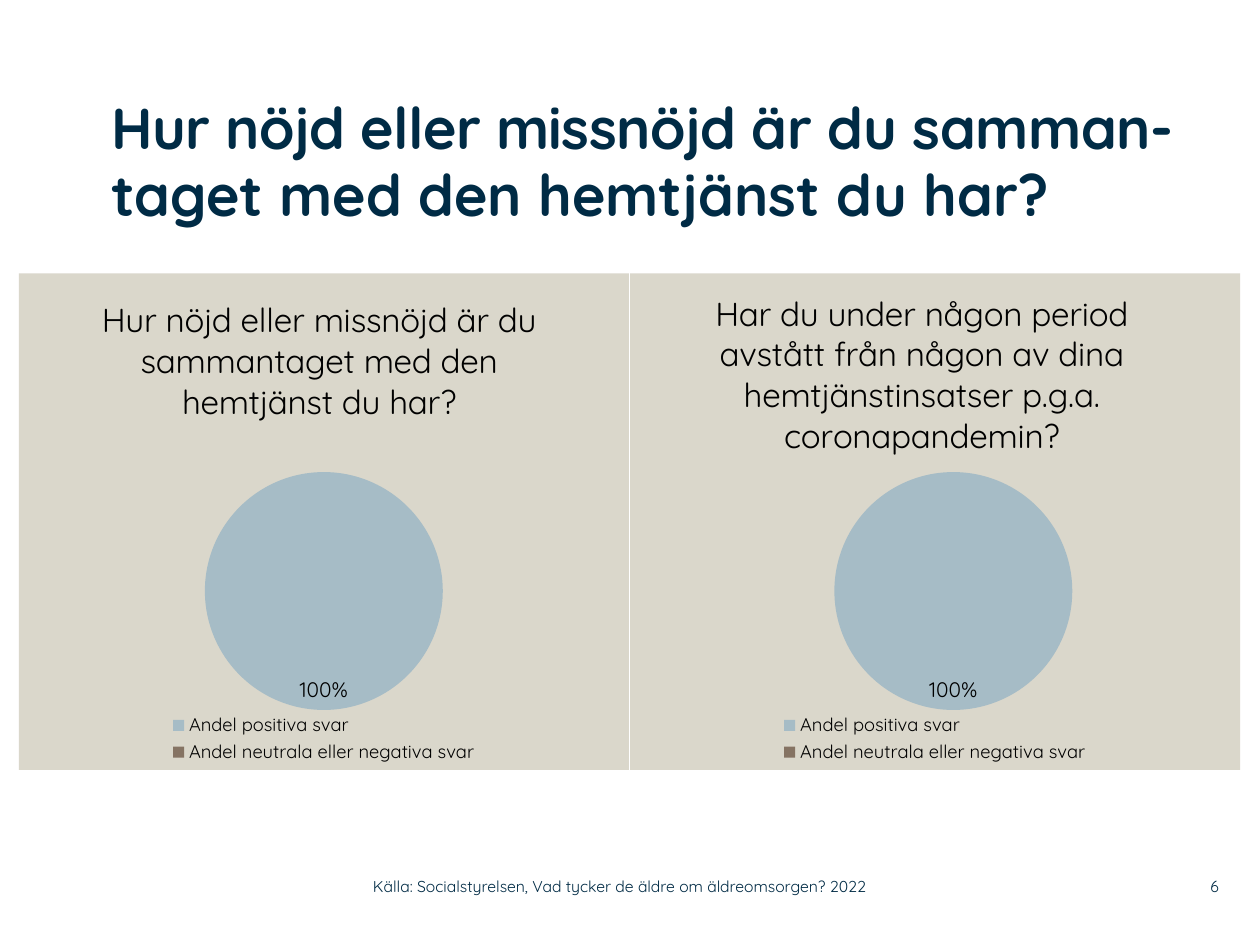
"""Build a slide with a heading, two pie charts and a footer."""
from lxml.etree import SubElement
from pptx import Presentation
from pptx.chart.data import CategoryChartData
from pptx.dml.color import RGBColor as Color
from pptx.enum.chart import XL_CHART_TYPE as ChartType, XL_LABEL_POSITION as LabelPosition
from pptx.enum.chart import XL_LEGEND_POSITION as LegendPosition
from pptx.enum.text import MSO_ANCHOR as Anchor, PP_ALIGN as Align
from pptx.oxml import parse_xml
from pptx.oxml.ns import nsdecls, qn
from pptx.util import Cm, Pt

THEME = {
    "font": "Quicksand",
    "navy": "002B45", "black": "000000", "panel": "DAD7CB",
    "slices": ("A6BCC6", "857363"),
    "heading": 33, "chart": 18, "chart_title": 19, "label": 12, "legend": 10.5, "footer": 9,
}

HEADING = [("Hur nöjd eller missnöjd är du samman-", -30), ("taget med den hemtjänst du har?", 0)]
SOURCE = [("Källa: Socialstyrelsen, Vad tycker de äldre om äldreomsorgen? 2022", 0)]
PAGE = [("6", 0)]

CATEGORIES = ["Andel positiva svar", "Andel neutrala eller negativa svar"]
VALUES = (100, 0)
LEGEND_AREA = (0.25, 0.88, 0.5, 0.115)
CHARTS = [
    {"title": "Har du under någon period avstått från någon av dina hemtjänstinsatser p.g.a. coronapandemin?",
     "column": 1, "title_at": (0.13, 0.02), "pie_area": (0.335, 0.4, 0.39, 0.48)},
    {"title": "Hur nöjd eller missnöjd är du sammantaget med den hemtjänst du har?",
     "column": 0, "title_at": (0.126, 0.034), "pie_area": (0.305, 0.4, 0.39, 0.48)},
]
CHART_LEFT, CHART_TOP, CHART_WIDTH, CHART_HEIGHT, CHART_STEP = 0.38, 5.51, 12.3, 10.01, 12.32
FOOTER_TOP, FOOTER_HEIGHT = 17.5, 0.74


def style(font, size, color, bold=False):
    font.name, font.size, font.bold = THEME["font"], Pt(size), bold
    font.color.rgb = Color.from_string(THEME[color])


def add_text(slide, box, runs, size, bold=False, align=Align.LEFT, anchor=Anchor.MIDDLE, spacing=None):
    frame = slide.shapes.add_textbox(*map(Cm, box)).text_frame
    frame.word_wrap, frame.vertical_anchor = True, anchor
    frame.margin_left = frame.margin_top = frame.margin_right = frame.margin_bottom = 0
    paragraph = frame.paragraphs[0]
    paragraph.alignment = align
    if spacing:
        paragraph.line_spacing = spacing
    for text, tracking in runs:
        run = paragraph.add_run()
        run.text = text
        style(run.font, size, "navy", bold)
        if tracking:
            run.font._element.set("spc", str(tracking))


def place(chart, part, index, area, inner=False):
    parent = chart.element.find(".//" + qn(part))
    for old in parent.findall(qn("c:layout")):
        parent.remove(old)
    layout = parse_xml(f"<c:layout {nsdecls('c')}><c:manualLayout/></c:layout>")
    settings = [("layoutTarget", "inner")] if inner else []
    settings += [("xMode", "edge"), ("yMode", "edge"), *zip("xywh", area)]
    for name, value in settings:
        SubElement(layout[0], qn(f"c:{name}")).set("val", str(value))
    parent.insert(index, layout)


def add_pie(slide, content):
    data = CategoryChartData()
    data.categories = CATEGORIES
    data.add_series("Series 1", VALUES)
    left = CHART_LEFT + content["column"] * CHART_STEP
    box = map(Cm, (left, CHART_TOP, CHART_WIDTH, CHART_HEIGHT))
    chart = slide.shapes.add_chart(ChartType.PIE, *box, data).chart
    style(chart.font, THEME["chart"], "black")
    chart.element.find(qn("c:txPr")).addprevious(parse_xml(
        f'<c:spPr {nsdecls("c", "a")}><a:solidFill><a:srgbClr val="{THEME["panel"]}"/></a:solidFill>'
        "<a:ln><a:noFill/></a:ln></c:spPr>"))

    chart.has_title = True
    run = chart.chart_title.text_frame.paragraphs[0].add_run()
    run.text = content["title"]
    style(run.font, THEME["chart_title"], "black")

    chart.has_legend = True
    chart.legend.position = LegendPosition.BOTTOM
    chart.legend.include_in_layout = False
    style(chart.legend.font, THEME["legend"], "black")

    plot = chart.plots[0]
    plot.vary_by_categories = True
    series = plot.series[0]
    for index, color in enumerate(THEME["slices"]):
        slice_format = series.points[index].format
        slice_format.fill.solid()
        slice_format.fill.fore_color.rgb = Color.from_string(color)
        slice_format.line.fill.background()

    labels = series.data_labels
    labels.show_percentage, labels.show_value = True, False
    labels.number_format, labels.number_format_is_linked = "0%", False
    labels.position = LabelPosition.INSIDE_END
    style(labels.font, THEME["label"], "black")
    chart.element.find(".//" + qn("c:dLbls")).insert(0, parse_xml(
        f'<c:dLbl {nsdecls("c")}><c:idx val="1"/><c:delete val="1"/></c:dLbl>'))

    place(chart, "c:title", 1, content["title_at"])
    place(chart, "c:plotArea", 0, content["pie_area"], inner=True)
    place(chart, "c:legend", 1, LEGEND_AREA)


def main():
    presentation = Presentation()
    presentation.slide_width, presentation.slide_height = Cm(25.4), Cm(19.05)
    slide = presentation.slides.add_slide(presentation.slide_layouts[6])
    add_text(slide, (2.24, 1.95, 22.7, 3.6), HEADING, THEME["heading"],
             bold=True, anchor=Anchor.TOP, spacing=0.96)
    for content in CHARTS:
        add_pie(slide, content)
    add_text(slide, (7.52, FOOTER_TOP, 11.25, FOOTER_HEIGHT), SOURCE, THEME["footer"])
    add_text(slide, (23.37, FOOTER_TOP, 1.2, FOOTER_HEIGHT), PAGE, THEME["footer"], align=Align.RIGHT)
    presentation.save("out.pptx")


if __name__ == "__main__":
    main()
